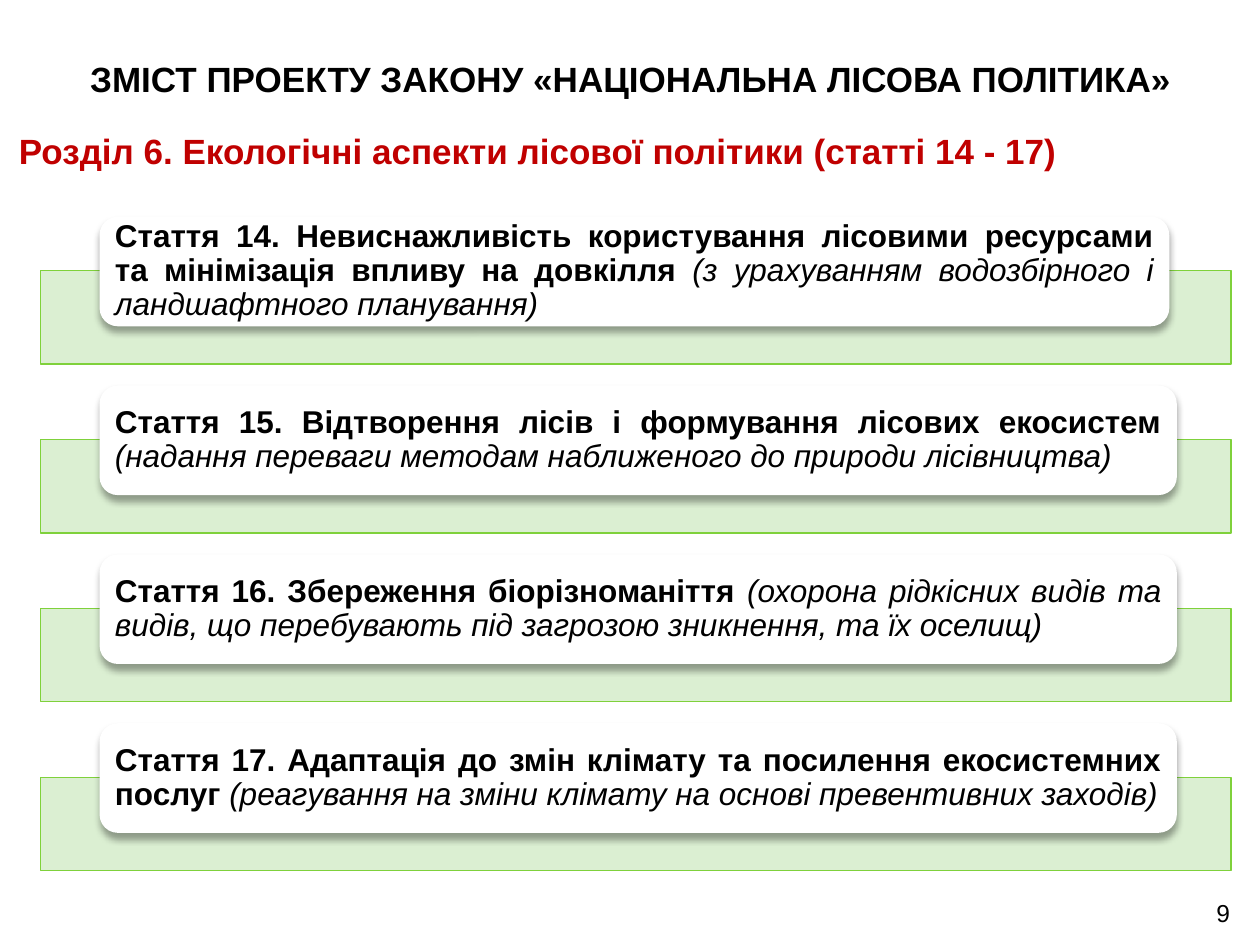
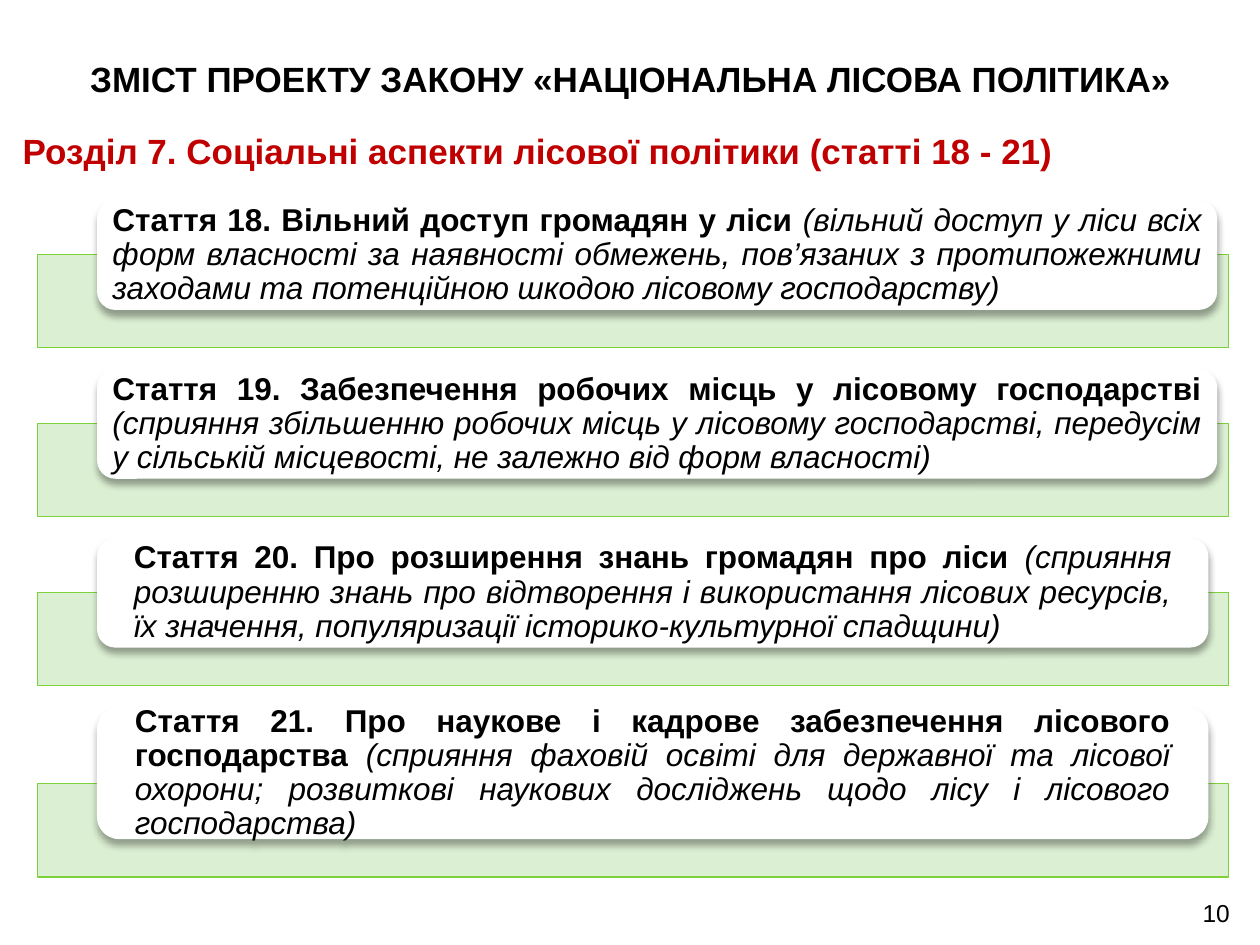
from lxml import etree
from pptx import Presentation
from pptx.dml.color import RGBColor
from pptx.enum.shapes import MSO_SHAPE
from pptx.enum.text import MSO_ANCHOR, PP_ALIGN
from pptx.oxml.ns import qn
from pptx.util import Pt

PX = 9144
RECTANGLE, ROUNDED = MSO_SHAPE.RECTANGLE, MSO_SHAPE.ROUNDED_RECTANGLE
TOP, MIDDLE, BOTTOM = MSO_ANCHOR.TOP, MSO_ANCHOR.MIDDLE, MSO_ANCHOR.BOTTOM
CENTER, RIGHT, JUSTIFY = PP_ALIGN.CENTER, PP_ALIGN.RIGHT, PP_ALIGN.JUSTIFY

TITLE = "ЗМІСТ ПРОЕКТУ ЗАКОНУ «НАЦІОНАЛЬНА ЛІСОВА ПОЛІТИКА»"
CARD_PITCH = 134
BAND_OVERLAP = 44

SECTIONS = [
    {
        "page": 9,
        "heading": "Розділ 6. Екологічні аспекти лісової політики (статті 14 - 17)",
        "left": 32,
        "top": 172,
        "articles": [
            ("Стаття 14. Невиснажливість користування лісовими ресурсами та мінімізація впливу на довкілля ",
             "(з урахуванням водозбірного і ландшафтного планування)", 849, 87, 8),
            ("Стаття 15. Відтворення лісів і формування лісових екосистем ",
             "(надання переваги методам наближеного до природи лісівництва)", 855, 87, 8),
            ("Стаття 16. Збереження біорізноманіття ",
             "(охорона рідкісних видів та видів, що перебувають під загрозою зникнення, та їх оселищ)",
             855, 87, 8),
            ("Стаття 17. Адаптація до змін клімату та посилення екосистемних послуг ",
             "(реагування на зміни клімату на основі превентивних заходів)", 855, 87, 8),
        ],
    },
    {
        "page": 10,
        "heading": "Розділ 7. Соціальні аспекти лісової політики (статті 18 - 21)",
        "left": 30,
        "top": 159,
        "articles": [
            ("Стаття 18. Вільний доступ громадян у ліси ",
             "(вільний доступ у ліси всіх форм власності за наявності обмежень, пов’язаних з "
             "протипожежними заходами та потенційною шкодою лісовому господарству)", 889, 87, 8),
            ("Стаття 19. Забезпечення робочих місць у лісовому господарстві ",
             "(сприяння збільшенню робочих місць у лісовому господарстві, передусім у сільській "
             "місцевості, не залежно від форм власності)", 889, 87, 8),
            ("Стаття 20. Про розширення знань громадян про ліси ",
             "(сприяння розширенню знань про відтворення і використання лісових ресурсів, їх "
             "значення, популяризації історико-культурної спадщини)", 882, 87, 25),
            ("Стаття 21. Про наукове і кадрове забезпечення лісового господарства ",
             "(сприяння фаховій освіті для державної та лісової охорони; розвиткові наукових "
             "досліджень щодо лісу і лісового господарства)", 882, 105, 25),
        ],
    },
]


def color(value):
    return RGBColor.from_string(value)


class Deck:
    font = "Arial"
    black, red, white = "000000", "C00000", "FFFFFF"
    band_fill, band_line = "D8EECE", "7FD13B"

    def __init__(self):
        self.presentation = Presentation()
        self.presentation.slide_width = 1000 * PX
        self.presentation.slide_height = 750 * PX
        self.slide = None

    def add_slide(self):
        layout = self.presentation.slide_layouts[6]
        self.slide = self.presentation.slides.add_slide(layout)

    def style(self, paragraph, size, align, ink):
        paragraph.alignment = align
        paragraph.font.name = self.font
        paragraph.font.size = Pt(size)
        paragraph.font.color.rgb = color(ink)

    def text(self, box, content, size, align, anchor, ink=black, bold=False):
        shape = self.slide.shapes.add_textbox(*(length * PX for length in box))
        frame = shape.text_frame
        frame.word_wrap = True
        frame.vertical_anchor = anchor
        paragraph = frame.paragraphs[0]
        paragraph.text = content
        self.style(paragraph, size, align, ink)
        paragraph.font.bold = bold

    def shape(self, kind, box, fill):
        shape = self.slide.shapes.add_shape(kind, *(length * PX for length in box))
        shape.shadow.inherit = False
        shape.fill.solid()
        shape.fill.fore_color.rgb = color(fill)
        return shape

    def add_alpha(self, color_element, percent):
        etree.SubElement(color_element, qn("a:alpha"), val=str(percent * 1000))

    def band(self, left, top):
        band = self.shape(RECTANGLE, (left, top, 945, 74), self.band_fill)
        band.line.color.rgb = color(self.band_line)
        band.line.width = Pt(0.75)
        fill_color = band.element.spPr.find(qn("a:solidFill")).find(qn("a:srgbClr"))
        self.add_alpha(fill_color, 90)

    def card(self, box, name, details, inset):
        card = self.shape(ROUNDED, box, self.white)
        card.line.fill.background()
        effects = card.element.spPr.find(qn("a:effectLst"))
        shadow = etree.SubElement(
            effects, qn("a:outerShdw"), blurRad=str(Pt(4)), dist=str(Pt(3)),
            dir="5400000", rotWithShape="0")
        self.add_alpha(etree.SubElement(shadow, qn("a:srgbClr"), val=self.black), 35)
        frame = card.text_frame
        frame.word_wrap = True
        frame.vertical_anchor = MIDDLE
        frame.margin_left = frame.margin_right = inset * PX
        frame.margin_top = frame.margin_bottom = 0
        paragraph = frame.paragraphs[0]
        self.style(paragraph, 18, JUSTIFY, self.black)
        paragraph.line_spacing = 0.9
        name_run = paragraph.add_run()
        name_run.text = name
        name_run.font.bold = True
        details_run = paragraph.add_run()
        details_run.text = details
        details_run.font.italic = True

    def section(self, page, heading, left, top, articles):
        self.add_slide()
        self.text((28, 0, 945, 125), TITLE, 20, CENTER, MIDDLE, bold=True)
        self.text((0, 98, 854, 44), heading, 20, CENTER, TOP, self.red, bold=True)
        for index, (name, details, width, height, inset) in enumerate(articles):
            card_top = top + index * CARD_PITCH
            self.band(left, card_top + height - BAND_OVERLAP)
            self.card((left + 47, card_top, width, height), name, details, inset)
        self.text((933, 701, 53, 40), str(page), 14, RIGHT, BOTTOM)


def main():
    deck = Deck()
    for section in SECTIONS:
        deck.section(**section)
    deck.presentation.save("out.pptx")


if __name__ == "__main__":
    main()
